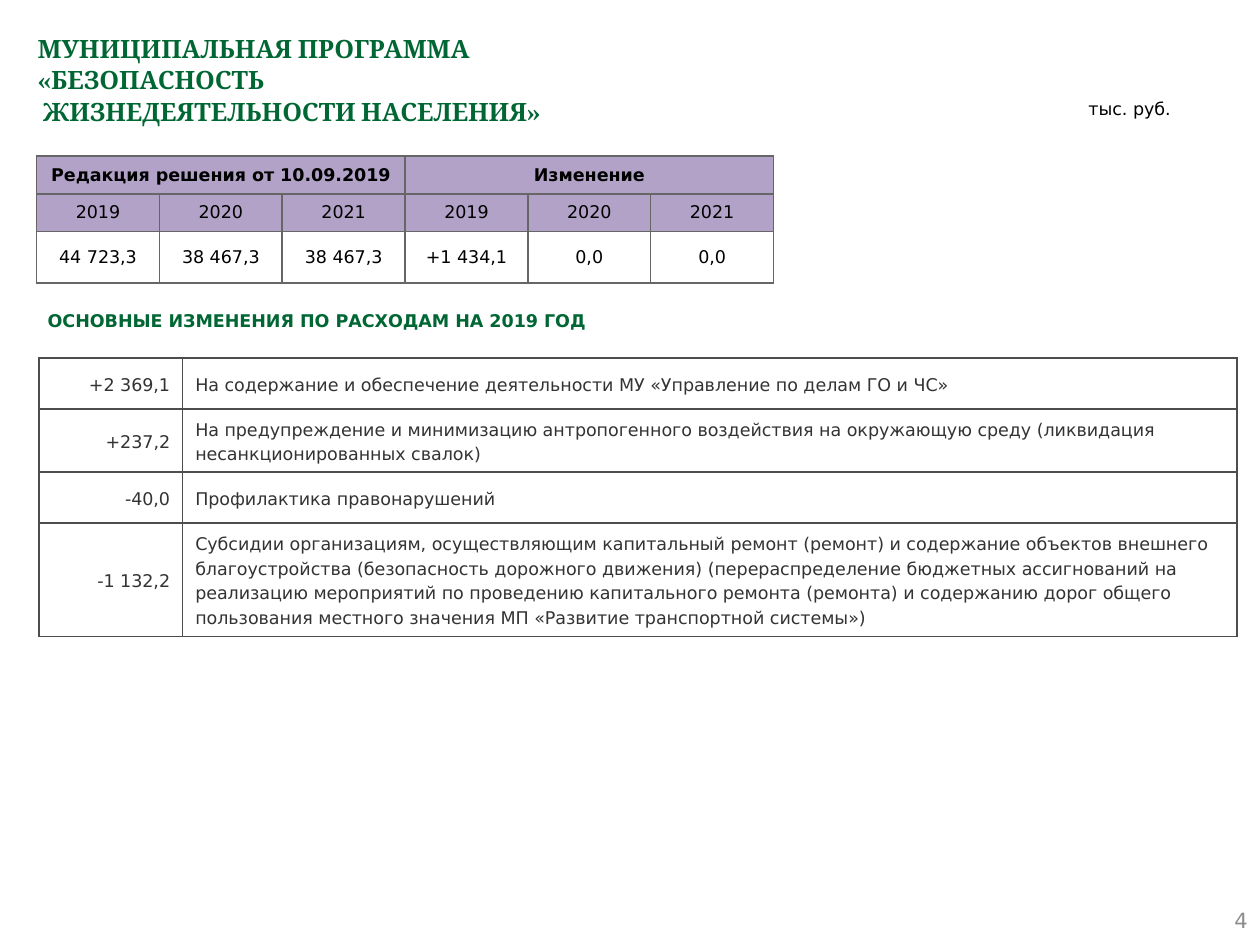
from dataclasses import dataclass

from lxml.etree import SubElement
from pptx import Presentation
from pptx.dml.color import RGBColor
from pptx.enum.shapes import MSO_SHAPE
from pptx.enum.text import MSO_ANCHOR, PP_ALIGN
from pptx.oxml.ns import qn
from pptx.util import Inches, Pt


@dataclass(frozen=True)
class Theme:
    """Colours, fonts and type sizes of the slide."""
    green: str = "006633"
    lilac: str = "B3A2C7"
    black: str = "000000"
    graphite: str = "333333"
    pale: str = "8C8C8C"
    summary_border: str = "666666"
    changes_border: str = "4D4D4D"
    serif: str = "Cambria"
    sans: str = "DejaVu Sans"
    title_size: float = 14.4
    body_size: float = 10
    number_size: float = 12


THEME = Theme()
WIDTH, HEIGHT = 10, 7.5
BODY = {"name": THEME.sans, "size": THEME.body_size, "bold": False, "color": THEME.black}
DETAIL = BODY | {"color": THEME.graphite}
STRONG = BODY | {"bold": True}
HEADING = STRONG | {"color": THEME.green}
TITLE = HEADING | {"name": THEME.serif, "size": THEME.title_size}
NUMBER = BODY | {"size": THEME.number_size, "color": THEME.pale}

HEADINGS = ["Редакция решения от 10.09.2019", "Изменение"]
YEARS = ["2019", "2020", "2021"]
AMOUNTS = ["44 723,3", "38 467,3", "38 467,3", "+1 434,1", "0,0", "0,0"]
CHANGES = [
    ("+2 369,1", "На содержание и обеспечение деятельности МУ «Управление по делам ГО и ЧС»"),
    ("+237,2", "На предупреждение и минимизацию антропогенного воздействия на окружающую "
               "среду (ликвидация несанкционированных свалок)"),
    ("-40,0", "Профилактика правонарушений"),
    ("-1 132,2", "Субсидии организациям, осуществляющим капитальный ремонт (ремонт) и содержание "
                 "объектов внешнего благоустройства (безопасность дорожного движения) "
                 "(перераспределение бюджетных ассигнований на реализацию мероприятий по проведению "
                 "капитального ремонта (ремонта) и содержанию дорог общего пользования местного "
                 "значения МП «Развитие транспортной системы»)"),
]


def area(left, top, width, height):
    """Turn percentages of the slide into a box."""
    return [Inches(share * side / 100)
            for share, side in zip((left, top, width, height), (WIDTH, HEIGHT) * 2)]


def write(frame, wording, style, align=PP_ALIGN.LEFT, spacing=1.0):
    """Put one styled paragraph into a text frame."""
    frame.word_wrap = True
    paragraph = frame.paragraphs[0]
    paragraph.text = wording
    for key, value in {"alignment": align, "line_spacing": spacing}.items():
        setattr(paragraph, key, value)
    for run in paragraph.runs:
        for key, value in style.items():
            if key == "color":
                run.font.color.rgb = RGBColor.from_string(value)
            else:
                setattr(run.font, key, Pt(value) if key == "size" else value)


def label(slide, box, wording, style, anchor=MSO_ANCHOR.TOP, **layout):
    """Place a text box."""
    frame = slide.shapes.add_textbox(*box).text_frame
    frame.vertical_anchor = anchor
    write(frame, wording, style, **layout)


def section_heading(slide, box, wording):
    """Place the unfilled pentagon that holds the section heading."""
    plate = slide.shapes.add_shape(MSO_SHAPE.PENTAGON, *box)
    plate.adjustments[0] = 0
    plate.shadow.inherit = False
    plate.fill.background()
    plate.line.fill.background()
    plate.text_frame.vertical_anchor = MSO_ANCHOR.MIDDLE
    write(plate.text_frame, wording, HEADING)


def grid(slide, box, column_shares, row_shares):
    """Place a plain table with columns and rows as shares of its box."""
    table = slide.shapes.add_table(len(row_shares), len(column_shares), *box).table
    table.first_row = table.horz_banding = False
    for column, share in zip(table.columns, column_shares):
        column.width = int(box[2] * share / sum(column_shares))
    for row, share in zip(table.rows, row_shares):
        row.height = int(box[3] * share / sum(row_shares))
    return table


def dress(cell, border, fill=None, inset=None):
    """Give a cell its borders, fill, anchor and margins."""
    properties = cell._tc.get_or_add_tcPr()
    for side in ("lnL", "lnR", "lnT", "lnB"):
        edge = SubElement(properties, qn(f"a:{side}"), w=str(Pt(1)))
        SubElement(SubElement(edge, qn("a:solidFill")), qn("a:srgbClr"), val=border)
    if fill:
        cell.fill.solid()
        cell.fill.fore_color.rgb = RGBColor.from_string(fill)
    else:
        cell.fill.background()
    cell.vertical_anchor = MSO_ANCHOR.MIDDLE
    if inset is not None:
        for side in ("left", "right", "top", "bottom"):
            setattr(cell, f"margin_{side}", Inches(inset))


def summary_table(slide, box):
    """Place the amounts by year under two merged headings."""
    span = len(YEARS)
    table = grid(slide, box, [1] * len(AMOUNTS), [3, 3, 4.1])
    headings = [text for heading in HEADINGS for text in [heading] + [""] * (span - 1)]
    rows = [(headings, STRONG, THEME.lilac),
            (YEARS * len(HEADINGS), BODY, THEME.lilac),
            (AMOUNTS, BODY, None)]
    for row, (wordings, style, fill) in enumerate(rows):
        for column, wording in enumerate(wordings):
            cell = table.cell(row, column)
            dress(cell, THEME.summary_border, fill, 0.05)
            write(cell.text_frame, wording, style, PP_ALIGN.CENTER)
    for start in range(0, len(AMOUNTS), span):
        table.cell(0, start).merge(table.cell(0, start + span - 1))


def changes_table(slide, box):
    """Place each change in spending beside its purpose."""
    table = grid(slide, box, [1.14, 8.37], [1] * len(CHANGES))
    for row, change in enumerate(CHANGES):
        for column, align in enumerate((PP_ALIGN.RIGHT, PP_ALIGN.LEFT)):
            cell = table.cell(row, column)
            dress(cell, THEME.changes_border)
            write(cell.text_frame, change[column], DETAIL, align, 1.2)


def main():
    """Build and save the slide."""
    deck = Presentation()
    deck.slide_width, deck.slide_height = Inches(WIDTH), Inches(HEIGHT)
    slide = deck.slides.add_slide(deck.slide_layouts[6])
    label(slide, area(2, 2.67, 96.1, 10.53),
          "МУНИЦИПАЛЬНАЯ ПРОГРАММА \v«БЕЗОПАСНОСТЬ\v ЖИЗНЕДЕЯТЕЛЬНОСТИ НАСЕЛЕНИЯ»",
          TITLE, spacing=1.05)
    label(slide, area(76.7, 94.67, 23.3, 5.33), "4", NUMBER,
          MSO_ANCHOR.MIDDLE, align=PP_ALIGN.RIGHT)
    section_heading(slide, area(2.8, 31.07, 49.2, 5.73),
                    "ОСНОВНЫЕ ИЗМЕНЕНИЯ ПО РАСХОДАМ НА 2019 ГОД")
    changes_table(slide, area(3.1, 37.87, 95.1, 21.6))
    label(slide, area(85.4, 9.33, 10.1, 4), "тыс. руб.", BODY, spacing=1.2)
    summary_table(slide, area(2.9, 16.53, 58.5, 13.4))
    deck.save("out.pptx")


if __name__ == "__main__":
    main()
